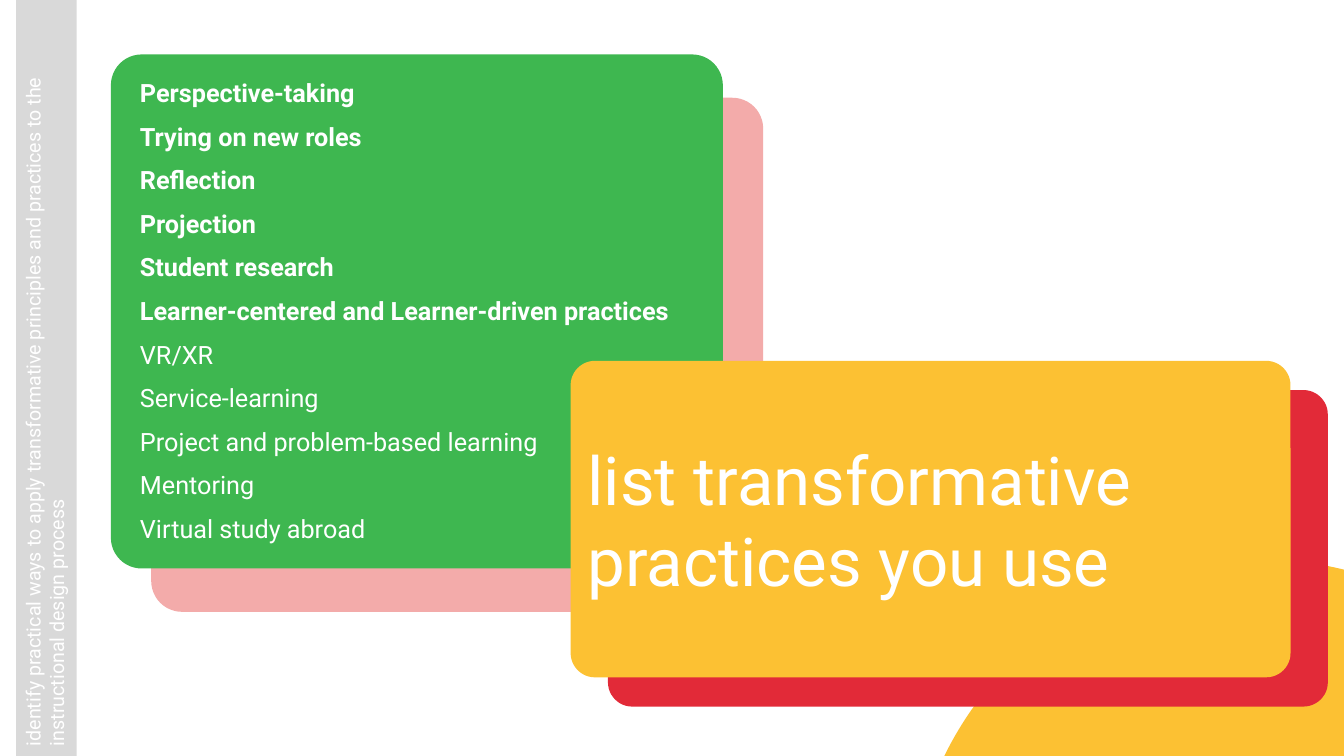
from dataclasses import dataclass
from typing import Optional

from pptx import Presentation
from pptx.dml.color import RGBColor
from pptx.enum.shapes import MSO_SHAPE
from pptx.enum.text import MSO_ANCHOR, MSO_AUTO_SIZE, PP_ALIGN
from pptx.util import Inches, Pt

RECTANGLE = MSO_SHAPE.RECTANGLE
OVAL = MSO_SHAPE.OVAL
ROUNDED = MSO_SHAPE.ROUNDED_RECTANGLE
TOP, MIDDLE = MSO_ANCHOR.TOP, MSO_ANCHOR.MIDDLE
LEFT = PP_ALIGN.LEFT
GROW = MSO_AUTO_SIZE.SHAPE_TO_FIT_TEXT

FONT = "Roboto"
COLORS = {
    "white": "FFFFFF",
    "grey": "D9D9D9",
    "yellow": "FCC133",
    "pink": "F3ABAA",
    "green": "3EB750",
    "red": "E22A38",
}


@dataclass(frozen=True)
class Panel:
    kind: MSO_SHAPE
    left: float
    top: float
    width: float
    height: float
    color: str
    corner: Optional[float] = None
    rotation: float = 0


@dataclass(frozen=True)
class Practice:
    text: str
    bold: bool = False


OBJECTIVE_BAR = Panel(RECTANGLE, -3.29, 3.45, 7.5, 0.6, "grey", rotation=270)
BACKDROPS = [
    Panel(OVAL, 9.01, 5.55, 6.97, 6.97, "yellow"),
    Panel(ROUNDED, 1.5, 0.97, 6.07, 5.1, "pink", 0.06),
    Panel(ROUNDED, 1.1, 0.54, 6.07, 5.1, "green", 0.06),
    Panel(ROUNDED, 6.03, 3.87, 7.14, 3.14, "red", 0.077),
]
TITLE_CARD = Panel(ROUNDED, 5.66, 3.58, 7.14, 3.14, "yellow", 0.077)

PRACTICES = [
    Practice("Perspective-taking", True),
    Practice("Trying on new roles", True),
    Practice("Reflection", True),
    Practice("Projection", True),
    Practice("Student research", True),
    Practice("Learner-centered and Learner-driven practices", True),
    Practice("VR/XR"),
    Practice("Service-learning"),
    Practice("Project and problem-based learning"),
    Practice("Mentoring"),
    Practice("Virtual study abroad"),
]
PRACTICE_FORMAT = {"line_spacing": 1.07, "space_after": Pt(8)}


def add_panel(page, panel: Panel):
    shape = page.shapes.add_shape(
        panel.kind, Inches(panel.left), Inches(panel.top),
        Inches(panel.width), Inches(panel.height))
    shape.shadow.inherit = False
    shape.fill.solid()
    shape.fill.fore_color.rgb = RGBColor.from_string(COLORS[panel.color])
    shape.line.fill.background()
    shape.rotation = panel.rotation
    if panel.corner is not None:
        shape.adjustments[0] = panel.corner
    return shape


def write_span(para, text: str, size: float, bold: bool = False) -> None:
    para.alignment = LEFT
    span = para.add_run()
    span.text = text
    for name, value in {"name": FONT, "size": Pt(size), "bold": bold}.items():
        setattr(span.font, name, value)
    span.font.color.rgb = RGBColor.from_string(COLORS["white"])


def add_labelled_panel(page, panel: Panel, text: str, size: float,
                       anchor: MSO_ANCHOR) -> None:
    frame = add_panel(page, panel).text_frame
    frame.word_wrap = True
    frame.vertical_anchor = anchor
    write_span(frame.paragraphs[0], text, size)


def add_practices(page, practices: list[Practice]) -> None:
    box = page.shapes.add_textbox(
        Inches(1.29), Inches(0.7), Inches(5.67), Inches(5.21))
    frame = box.text_frame
    frame.word_wrap = True
    frame.auto_size = GROW
    for index, practice in enumerate(practices):
        para = frame.add_paragraph() if index else frame.paragraphs[0]
        for name, value in PRACTICE_FORMAT.items():
            setattr(para, name, value)
        write_span(para, practice.text, 18, practice.bold)


def main() -> None:
    deck = Presentation()
    deck.slide_width, deck.slide_height = Inches(13.33), Inches(7.5)
    page = deck.slides.add_slide(deck.slide_layouts[6])

    # Learning objective along the left edge
    add_labelled_panel(
        page, OBJECTIVE_BAR,
        "identify practical ways to apply transformative principles and "
        "practices to the instructional design process", 14, TOP)

    # Circle and layered cards
    for panel in BACKDROPS:
        add_panel(page, panel)

    # List of practices, then the title card over it
    add_practices(page, PRACTICES)
    add_labelled_panel(
        page, TITLE_CARD, "list transformative practices you use", 48, MIDDLE)

    deck.save("out.pptx")


if __name__ == "__main__":
    main()
